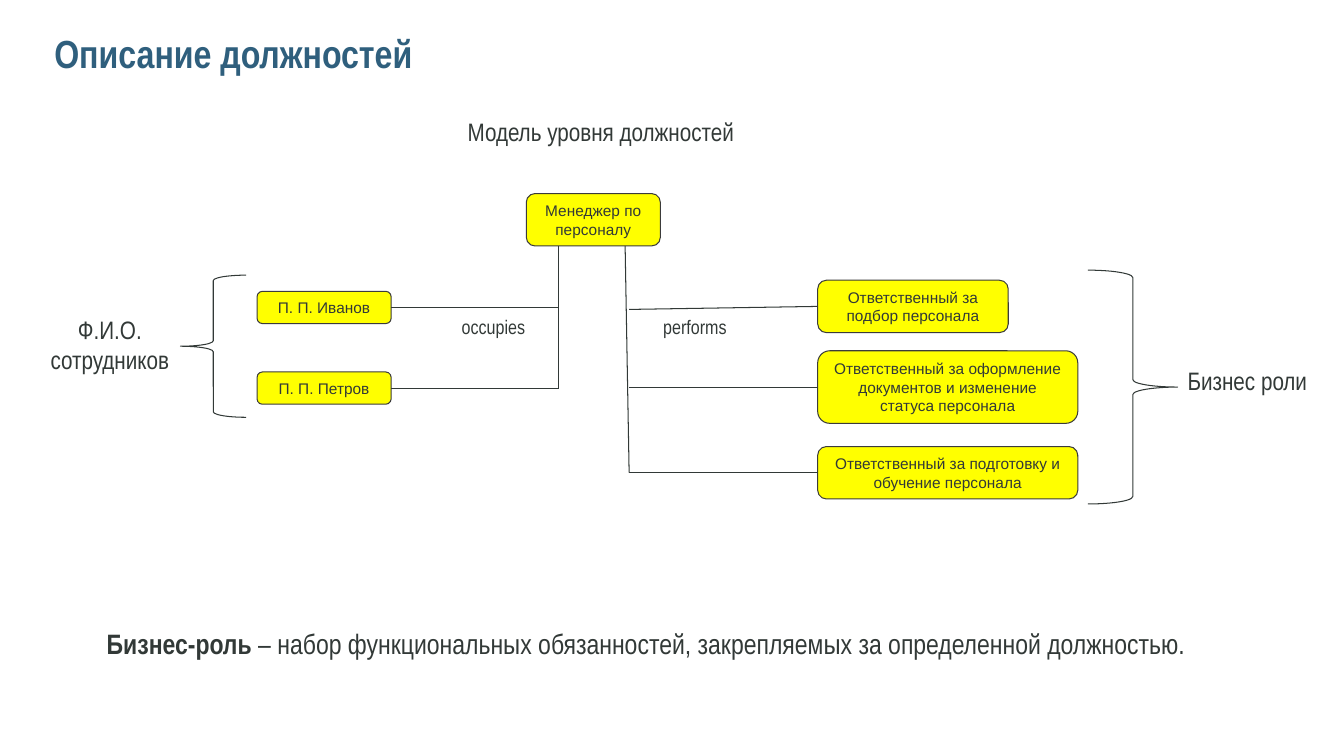
"""Builds the slide that describes job positions and their business roles."""
from dataclasses import dataclass

from lxml.etree import SubElement
from pptx import Presentation
from pptx.dml.color import RGBColor
from pptx.enum.shapes import MSO_CONNECTOR as Connector, MSO_SHAPE as Preset
from pptx.enum.text import MSO_ANCHOR as Anchor, MSO_AUTO_SIZE as AutoSize, PP_ALIGN as Align
from pptx.oxml.ns import qn
from pptx.util import Emu, Pt

PX = 9144
TOP, LEFT, RIGHT = 0, 1, 3


@dataclass(frozen=True)
class Theme:
    """Colours, fonts and type sizes of the slide."""
    ink: RGBColor = RGBColor.from_string("323937")
    title: RGBColor = RGBColor.from_string("2F5F7D")
    node: RGBColor = RGBColor.from_string("FFFF00")
    border: RGBColor = RGBColor.from_string("3B3B3B")
    narrow: str = "Arial Narrow"
    plain: str = "Arial"
    title_size: int = 28
    note_size: int = 20
    label_size: int = 18
    relation_size: int = 14
    node_size: int = 11
    line_width: float = 0.75


THEME = Theme()


def px(*lengths):
    """Turn whole pixels into EMU."""
    return [Emu(length * PX) for length in lengths]


def set_font(font, size, color=THEME.ink, name=THEME.narrow, bold=False):
    """Set the type of a paragraph."""
    font.name, font.size, font.bold = name, Pt(size), bold
    font.color.rgb = color


def add_text(page, area, lines, size, color=THEME.ink, bold=False, align=Align.LEFT, wrap=False):
    """Add a text box with one paragraph for each line."""
    frame = page.shapes.add_textbox(*px(*area)).text_frame
    frame.word_wrap = wrap
    frame.auto_size = AutoSize.SHAPE_TO_FIT_TEXT
    frame.text = "\n".join(lines)
    for para in frame.paragraphs:
        para.alignment = align
        set_font(para.font, size, color, bold=bold)
    return frame


def add_title(page, text):
    """Add the slide title."""
    frame = add_text(page, (44, 9, 1044, 65), [text], THEME.title_size, THEME.title, True, wrap=True)
    frame.auto_size = AutoSize.NONE
    frame.margin_top, = px(20)


def add_note(page, term, meaning):
    """Add the definition with its term in bold."""
    frame = add_text(page, (96, 617, 1104, 44), [term], THEME.note_size, wrap=True)
    para = frame.paragraphs[0]
    para.runs[0].font.bold = True
    span = para.add_run()
    span.text = meaning


def add_outline(page, preset, area, color):
    """Add a preset shape with a thin outline and no fill."""
    shape = page.shapes.add_shape(preset, *px(*area))
    shape.shadow.inherit = False
    shape.fill.background()
    shape.line.color.rgb = color
    shape.line.width = Pt(THEME.line_width)
    return shape


def add_node(page, area, text):
    """Add a yellow rounded box with centred text."""
    box = add_outline(page, Preset.ROUNDED_RECTANGLE, area, THEME.border)
    box.fill.solid()
    box.fill.fore_color.rgb = THEME.node
    frame = box.text_frame
    frame.word_wrap = True
    frame.vertical_anchor = Anchor.MIDDLE
    frame.text = text
    para = frame.paragraphs[0]
    para.alignment = Align.CENTER
    set_font(para.font, THEME.node_size, name=THEME.plain)
    return box


def add_line(page, start, end, box=None, side=None):
    """Add a straight line, joined to a box side when one is given."""
    line = page.shapes.add_connector(Connector.STRAIGHT, *px(*start, *end))
    line.line.color.rgb = THEME.ink
    line.line.width = Pt(THEME.line_width)
    SubElement(line._element.spPr, qn("a:effectLst"))
    if box is not None:
        line.end_connect(box, side)


def main():
    """Build the slide and save it."""
    deck = Presentation()
    deck.slide_width, deck.slide_height = px(1333, 750)
    page = deck.slides.add_slide(deck.slide_layouts[6])

    add_title(page, "Описание должностей")
    add_text(page, (454, 110, 290, 40), ["Модель уровня должностей"], THEME.label_size)

    add_node(page, (522, 192, 133, 52), "Менеджер по персоналу")
    add_line(page, (554, 244), (554, 385))
    add_line(page, (620, 244), (624, 469))

    for top, name in ((289, "П. П. Иванов"), (369, "П. П. Петров")):
        employee = add_node(page, (255, top, 133, 32), name)
        middle = top + 16
        add_line(page, (554, middle), (388, middle), employee, RIGHT)

    roles = (
        (278, 189, 52, 307, "Ответственный за подбор персонала"),
        (348, 258, 72, 384, "Ответственный за оформление документов и изменение статуса персонала"),
        (443, 258, 52, 469, "Ответственный за подготовку и обучение персонала"),
    )
    for top, width, height, branch, name in roles:
        role = add_node(page, (811, top, width, height), name)
        add_line(page, (624, branch), (811, top + height // 2), role, LEFT)

    for left, relation in ((448, "occupies"), (648, "performs")):
        add_text(page, (left, 308, 84, 34), [relation], THEME.relation_size)

    add_outline(page, Preset.LEFT_BRACE, (179, 273, 65, 141), THEME.ink)
    add_outline(page, Preset.RIGHT_BRACE, (1079, 268, 89, 232), THEME.ink)
    add_text(page, (39, 307, 140, 71), ["Ф.И.О.", "сотрудников"], THEME.label_size, align=Align.CENTER)
    add_text(page, (1168, 358, 141, 40), ["Бизнес роли"], THEME.label_size)

    add_note(page, "Бизнес-роль",
             " – набор функциональных обязанностей, закрепляемых за определенной должностью.")
    deck.save("out.pptx")


if __name__ == "__main__":
    main()
